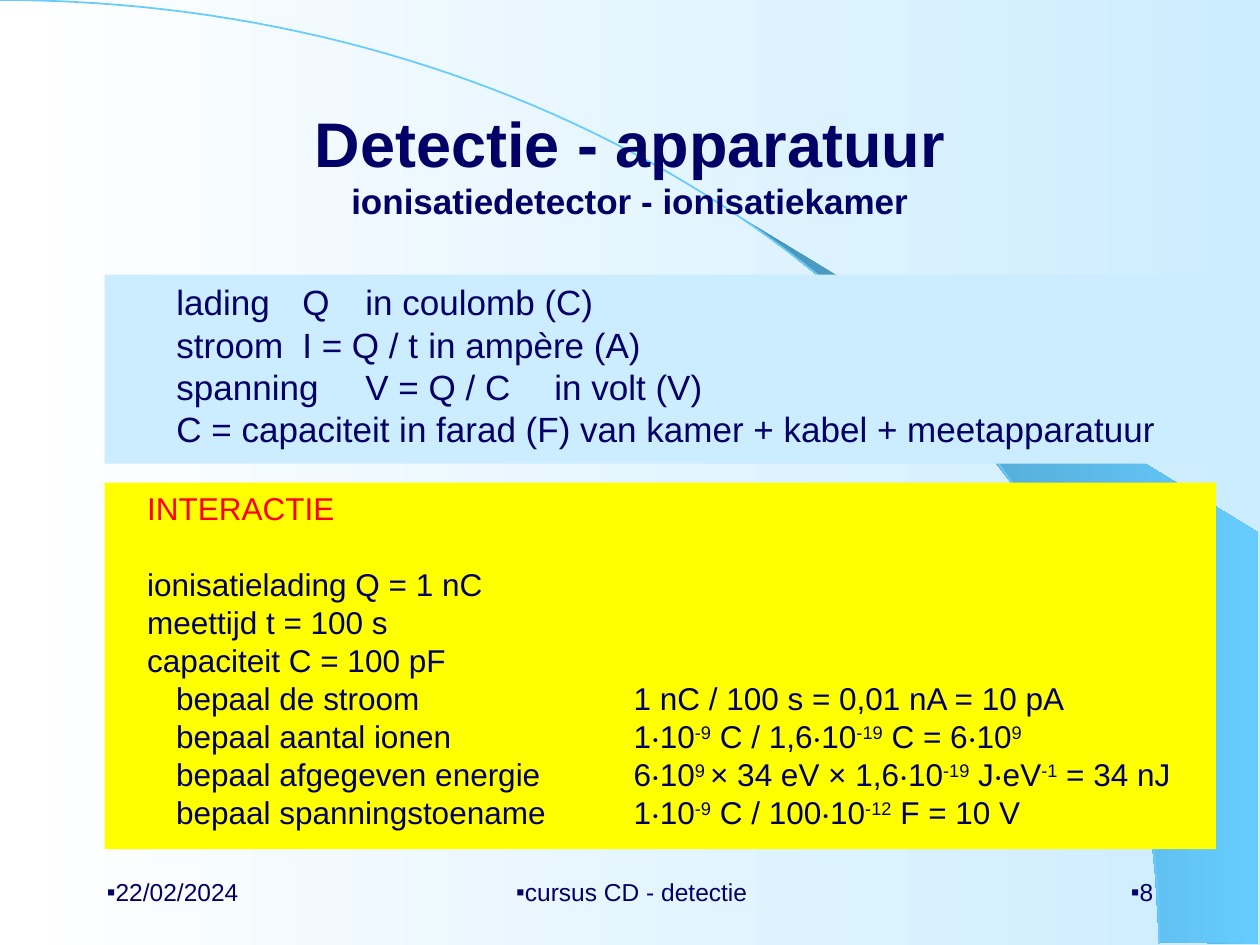
from dataclasses import dataclass
from itertools import groupby

import pptx
import pptx.dml.color
import pptx.enum.shapes
import pptx.enum.text
import pptx.oxml.ns
import pptx.util
from lxml import etree

Inches, Pt = pptx.util.Inches, pptx.util.Pt
RGB = pptx.dml.color.RGBColor
Align = pptx.enum.text.PP_ALIGN
Anchor = pptx.enum.text.MSO_ANCHOR
qn = pptx.oxml.ns.qn

NAVY = RGB(0x00, 0x00, 0x66)
RED = RGB(0xFF, 0x00, 0x00)
WHITE = RGB(0xFF, 0xFF, 0xFF)
PALE = RGB(0xCC, 0xEC, 0xFF)
SKY = RGB(0x66, 0xCC, 0xFF)
STEEL = RGB(0x49, 0x92, 0xB6)
YELLOW = RGB(0xFF, 0xFF, 0x00)
FONT, DOTS = "Arial", "TeX Gyre Schola"
LEAD = 21.7  # line pitch in the yellow boxes, points


@dataclass
class Box:
    left: float
    top: float
    width: float
    height: float

    def emu(self) -> list:
        return [Inches(v) for v in (self.left, self.top, self.width, self.height)]


@dataclass
class Line:
    text: str
    indent: float = 0.24
    color: RGB = NAVY
    after: float = 0


@dataclass
class Foot:
    text: str
    box: Box
    align: Align


def place(shape, box: Box) -> None:
    shape.left, shape.top, shape.width, shape.height = box.emu()


def blend(fill, first: RGB, last: RGB) -> None:
    fill.gradient()
    fill.gradient_angle = 0
    for stop, color, pos in zip(fill.gradient_stops, (first, last), (0, 1)):
        stop.color.rgb = color
        stop.position = pos


def style(para, size: float, color: RGB = NAVY, bold: bool = False) -> None:
    font = para.font
    font.name, font.size, font.bold = FONT, Pt(size), bold
    font.color.rgb = color


def setup(para, indent: float, mark: str = "", tabs: tuple = ()) -> None:
    """Set indent, bullet and tab stops of a paragraph."""
    props = para._p.get_or_add_pPr()
    props.set("marL", str(Inches(indent)))
    props.set("indent", "0")
    if mark:
        etree.SubElement(props, qn("a:buFont"), typeface=FONT)
        etree.SubElement(props, qn("a:buChar"), char=mark)
    else:
        etree.SubElement(props, qn("a:buNone"))
    if tabs:
        stops = etree.SubElement(props, qn("a:tabLst"))
        for pos in tabs:
            etree.SubElement(stops, qn("a:tab"), pos=str(Inches(pos)), algn="l")


def write(para, text: str) -> None:
    """Add runs; every second part between bars is superscript."""
    for i, part in enumerate(text.split("|")):
        for dot, chars in groupby(part, lambda c: c == "·"):
            run = para.add_run()
            run.text = "".join(chars)
            if dot:
                run.font.name = DOTS
            if i % 2:
                run._r.get_or_add_rPr().set("baseline", "30000")


def fill_text(frame, lines: list, size: float, pitch: float, tabs: tuple = ()) -> None:
    frame.word_wrap = True
    frame.auto_size = pptx.enum.text.MSO_AUTO_SIZE.NONE
    frame.vertical_anchor = Anchor.TOP
    for i, line in enumerate(lines):
        para = frame.add_paragraph() if i else frame.paragraphs[0]
        setup(para, line.indent, tabs=tabs)
        para.alignment = Align.LEFT
        para.line_spacing = Pt(pitch)
        para.space_before, para.space_after = Pt(0), Pt(line.after)
        style(para, size, line.color)
        write(para, line.text)


def panel(slide, box: Box, lines: list, skip: int = 0) -> None:
    """Draw a yellow box whose text starts after some empty lines."""
    rect = slide.shapes.add_shape(pptx.enum.shapes.MSO_SHAPE.RECTANGLE, *box.emu())
    rect.shadow.inherit = False
    rect.fill.solid()
    rect.fill.fore_color.rgb = YELLOW
    rect.line.fill.background()
    rect.text_frame.margin_top = Inches(0.05 + skip * LEAD / 72)
    fill_text(rect.text_frame, lines, 18, LEAD)


def outline(slide, points: list, close: bool):
    start, *rest = [(Inches(x), Inches(y)) for x, y in points]
    pen = slide.shapes.build_freeform(*start, scale=1.0)
    pen.add_line_segments(rest, close=close)
    shape = pen.convert_to_shape()
    shape.shadow.inherit = False
    return shape


def curve(steps: int = 80) -> list:
    """Sample the quarter arc from the top left to the lower right."""
    points = []
    for i in range(steps + 1):
        t = i / steps
        u = 1 - t
        points.append((3 * u * u * t * 5.08 + (3 * u * t * t + t ** 3) * 9.2,
                       3 * u * t * t * 3.35 + t ** 3 * 7.49))
    return points


def footer(slide, foot: Foot) -> None:
    frame = slide.shapes.add_textbox(*foot.box.emu()).text_frame
    frame.word_wrap = True
    frame.vertical_anchor = Anchor.MIDDLE
    para = frame.paragraphs[0]
    setup(para, 0, mark="▪")
    para.alignment = foot.align
    style(para, 14)
    write(para, foot.text)


WEDGE = [(9.2, 7.48), (9.99, 7.49), (9.99, 4.23), (5.89, 1.73), (6.24, 1.99),
         (6.53, 2.22), (6.85, 2.5), (7.16, 2.8), (7.62, 3.3), (8.03, 3.84),
         (8.32, 4.31), (8.58, 4.79), (8.78, 5.28), (8.93, 5.72), (9.03, 6.09),
         (9.13, 6.56), (9.17, 6.96)]
UNITS = ["lading\tQ\tin coulomb (C)",
         "stroom\tI = Q / t\tin ampère (A)",
         "spanning\tV = Q / C\tin volt (V)",
         "C = capaciteit in farad (F) van kamer + kabel + meetapparatuur"]
GIVEN = ["ionisatielading Q = 1 nC", "meettijd t = 100 s", "capaciteit C = 100 pF"]
TASKS = ["bepaal de stroom", "bepaal aantal ionen",
         "bepaal afgegeven energie", "bepaal spanningstoename"]
SOLVED = ["1 nC / 100 s = 0,01 nA = 10 pA",
          "1·10|-9| C / 1,6·10|-19| C = 6·10|9",
          "6·10|9 |× 34 eV × 1,6·10|-19| J·eV|-1| = 34 nJ",
          "1·10|-9| C / 100·10|-12| F = 10 V"]
FEET = [Foot("22/02/2024", Box(0.75, 6.83, 2.08, 0.5), Align.LEFT),
        Foot("cursus CD - detectie", Box(3.43, 6.83, 3.17, 0.5), Align.CENTER),
        Foot("8", Box(7.17, 6.83, 2.08, 0.5), Align.RIGHT)]


def main() -> None:
    deck = pptx.Presentation()
    deck.slide_width, deck.slide_height = Inches(10), Inches(7.5)
    slide = deck.slides.add_slide(deck.slide_layouts[1])
    blend(slide.background.fill, WHITE, PALE)

    # Wedge and arc, behind the placeholders
    wedge = outline(slide, WEDGE, True)
    blend(wedge.fill, STEEL, SKY)
    wedge.line.fill.background()
    arc = outline(slide, curve(), False)
    arc.fill.background()
    arc.line.color.rgb = SKY
    arc.line.width = Pt(1)
    for i, shape in enumerate((wedge, arc)):
        slide.shapes._spTree.insert(2 + i, shape._element)

    # Title
    title = slide.shapes.title
    place(title, Box(0.75, 0.67, 8.5, 1.25))
    frame = title.text_frame
    frame.auto_size = pptx.enum.text.MSO_AUTO_SIZE.NONE
    frame.vertical_anchor = Anchor.MIDDLE
    para = frame.paragraphs[0]
    para.alignment = Align.CENTER
    style(para, 36, bold=True)
    write(para, "Detectie - apparatuur")
    para.add_line_break()
    write(para, "ionisatiedetector - ionisatiekamer")
    para.runs[-1].font.size = Pt(20)

    # Quantities and units
    body = slide.placeholders[1]
    place(body, Box(0.83, 2.18, 8.82, 1.5))
    body.fill.solid()
    body.fill.fore_color.rgb = PALE
    fill_text(body.text_frame, [Line(t, 0.47) for t in UNITS], 20, 24, (1.89, 3.78))

    # Exercise and answers
    head = Line("INTERACTIE", color=RED, after=LEAD)
    panel(slide, Box(0.83, 3.83, 3.86, 2.91),
          [head, *map(Line, GIVEN), *(Line(t, 0.47) for t in TASKS)])
    panel(slide, Box(4.69, 3.83, 4.96, 2.91), [Line(t) for t in SOLVED], skip=5)

    # Footer
    for foot in FEET:
        footer(slide, foot)
    deck.save("out.pptx")


if __name__ == "__main__":
    main()
